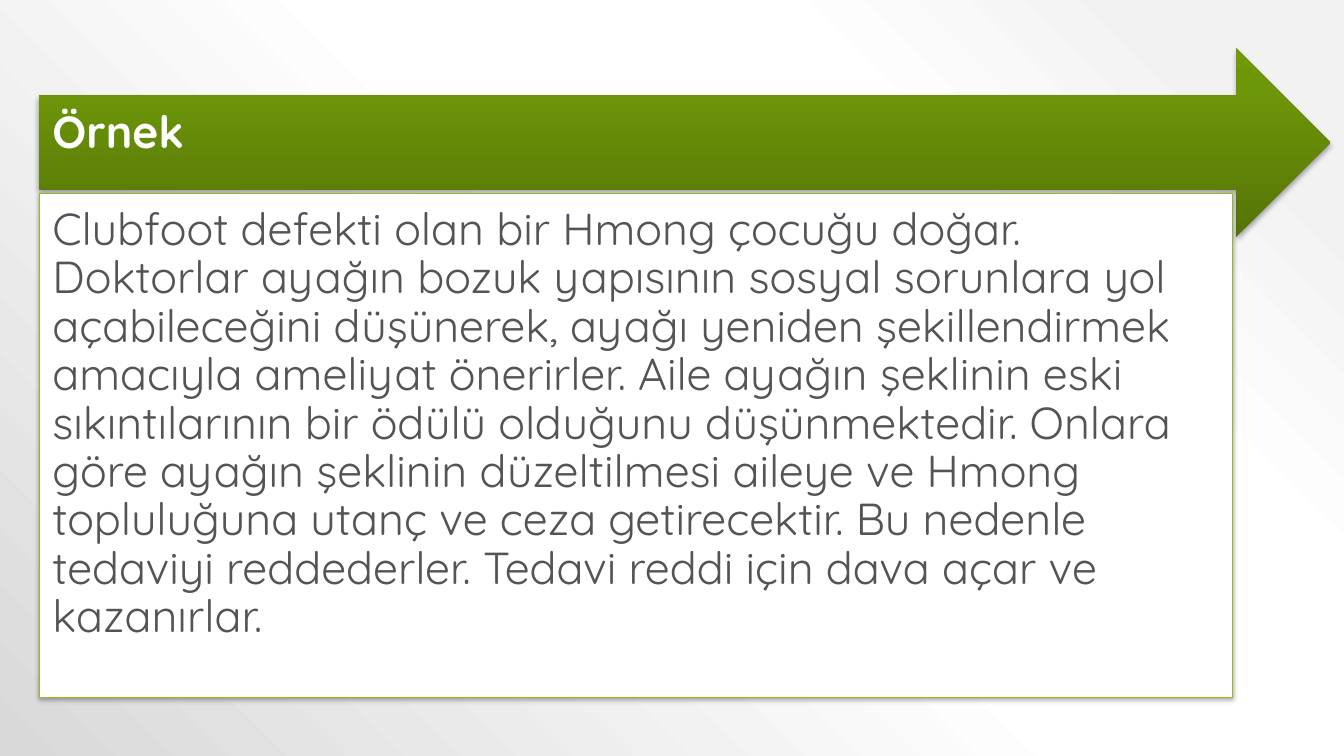
from lxml import etree
from pptx import Presentation
from pptx.dml.color import RGBColor
from pptx.enum.shapes import MSO_SHAPE as SHAPE
from pptx.enum.text import MSO_ANCHOR as ANCHOR, PP_ALIGN as ALIGN
from pptx.oxml import parse_xml
from pptx.oxml.ns import nsdecls, qn
from pptx.util import Cm, Pt

COLORS = {
    "white": "FFFFFF",
    "text": "545454",
    "border": "90BB23",
    "green_dark": "557407",
    "green_mid": "6E9609",
    "green_light": "709A06",
    "gray_light": "F2F2F2",
    "gray_dark": "D9D9D9",
    "shadow": "000000",
}
FONT = "Quicksand"
LEFT = Cm(0.99)
INSET = Cm(0.33)
TITLE = "Örnek"
BODY = (
    "Clubfoot defekti olan bir Hmong çocuğu doğar. Doktorlar ayağın bozuk "
    "yapısının sosyal sorunlara yol açabileceğini düşünerek, ayağı yeniden "
    "şekillendirmek amacıyla ameliyat önerirler. Aile ayağın şeklinin eski "
    "sıkıntılarının bir ödülü olduğunu düşünmektedir. Onlara göre ayağın "
    "şeklinin düzeltilmesi aileye ve Hmong topluluğuna utanç ve ceza "
    "getirecektir. Bu nedenle tedaviyi reddederler. Tedavi reddi için dava "
    "açar ve kazanırlar."
)


def rgb(name):
    return RGBColor.from_string(COLORS[name])


def set_gradient(parent, fill, stops, direction):
    """Replace the solid fill of parent by a gradient of (percent, colour) stops."""
    fill.solid()
    gs = "".join(
        f'<a:gs pos="{pos * 1000}"><a:srgbClr val="{COLORS[name]}"/></a:gs>'
        for pos, name in stops
    )
    gradient = parse_xml(
        f'<a:gradFill {nsdecls("a")} rotWithShape="1">'
        f"<a:gsLst>{gs}</a:gsLst>{direction}</a:gradFill>"
    )
    parent.replace(parent.find(qn("a:solidFill")), gradient)


def add_shadow(sp):
    sp.shadow.inherit = False
    effects = sp._element.spPr.find(qn("a:effectLst"))
    shadow = etree.SubElement(
        effects, qn("a:outerShdw"), blurRad=str(Pt(3.1)), dist=str(Pt(1.8)),
        dir="5400000", algn="ctr", rotWithShape="0",
    )
    color = etree.SubElement(shadow, qn("a:srgbClr"), val=COLORS["shadow"])
    etree.SubElement(color, qn("a:alpha"), val="35000")


def set_text(sp, text, color, anchor, bold=False, right=INSET, bottom=INSET):
    tf = sp.text_frame
    tf.word_wrap = True
    tf.vertical_anchor = anchor
    tf.margin_left = tf.margin_top = INSET
    tf.margin_right, tf.margin_bottom = right, bottom
    tf.text = text
    p = tf.paragraphs[0]
    p.alignment = ALIGN.LEFT
    p.line_spacing = 0.9
    p.space_after = Pt(11)
    font = p.runs[0].font
    font.name, font.size, font.bold = FONT, Pt(32), bold
    font.color.rgb = rgb(color)


def add_background(slide):
    fill = slide.background.fill
    fill.solid()
    set_gradient(
        slide._element.cSld.bg.bgPr, fill,
        [(10, "gray_light"), (28, "white"), (48, "white"), (100, "gray_dark")],
        '<a:path path="circle"><a:fillToRect l="100000" b="100000"/></a:path>',
    )


def add_title_arrow(slide):
    sp = slide.shapes.add_shape(
        SHAPE.RIGHT_ARROW, LEFT, Cm(1.22), Cm(32.54), Cm(4.75))
    set_gradient(
        sp._element.spPr, sp.fill,
        [(0, "green_dark"), (80, "green_mid"), (100, "green_light")],
        '<a:lin ang="16200000" scaled="0"/>',
    )
    sp.line.fill.background()
    add_shadow(sp)
    set_text(sp, TITLE, "white", ANCHOR.MIDDLE, bold=True,
             right=Cm(0.71), bottom=Cm(0.76))


def add_body_box(slide):
    sp = slide.shapes.add_shape(
        SHAPE.RECTANGLE, LEFT, Cm(4.88), Cm(30.07), Cm(12.7))
    sp.fill.solid()
    sp.fill.fore_color.rgb = rgb("white")
    sp.line.color.rgb = rgb("border")
    sp.line.width = Pt(0.75)
    add_shadow(sp)
    set_text(sp, BODY, "text", ANCHOR.TOP)


def main():
    prs = Presentation()
    prs.slide_width, prs.slide_height = Cm(33.87), Cm(19.05)
    slide = prs.slides.add_slide(prs.slide_layouts[6])
    add_background(slide)
    add_title_arrow(slide)
    add_body_box(slide)
    prs.save("out.pptx")


if __name__ == "__main__":
    main()
